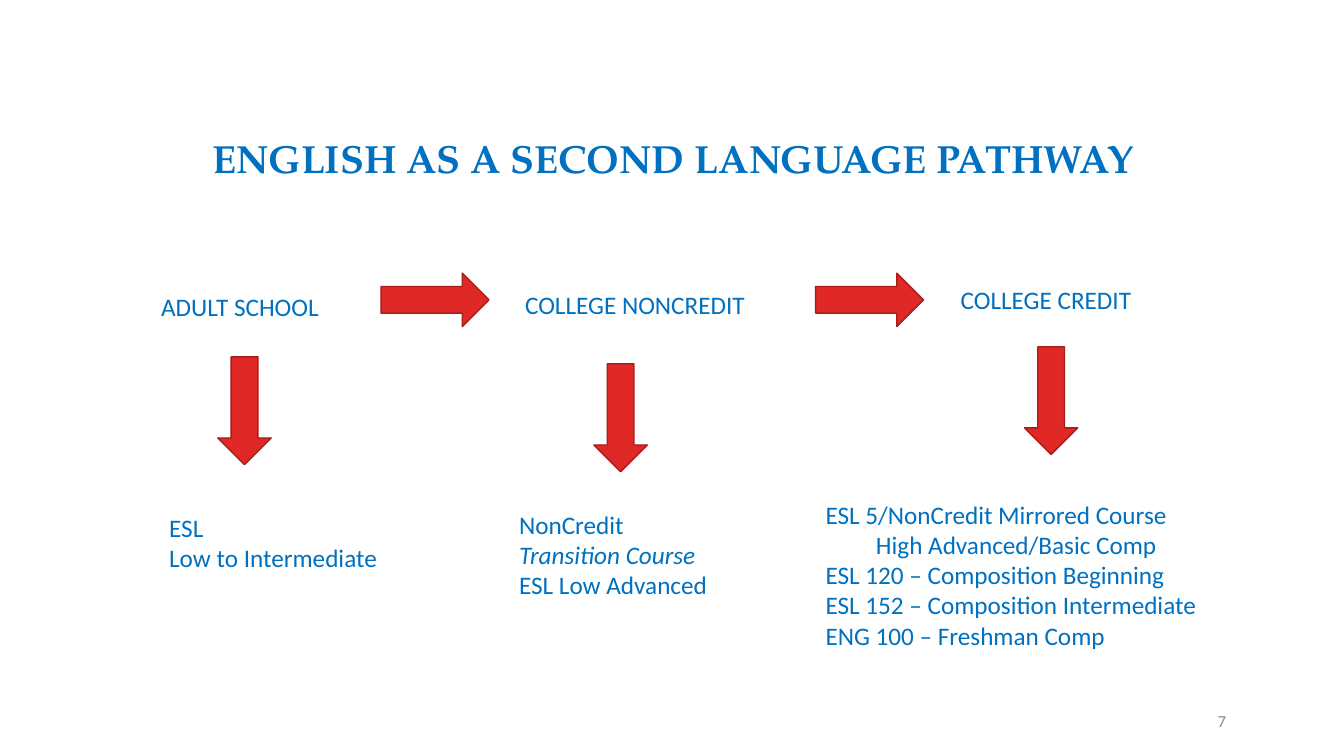
import pptx
import pptx.util
import pptx.dml.color
import pptx.enum.shapes
import pptx.enum.text

Inches = pptx.util.Inches
ALIGN = pptx.enum.text.PP_ALIGN
ANCHOR = pptx.enum.text.MSO_ANCHOR

COLORS = {"text": "0070C0", "arrow": "E02826", "edge": "A61E1C", "number": "888888"}
BODY_FONT = "Calibri"
TITLE_FONT = "TeX Gyre Pagella"
ITALIC_TEXT = "Transition Course"

TITLE = ("ENGLISH AS A SECOND LANGUAGE PATHWAY", (1.18, 1.32, 11, 0.53))
PAGE_NUMBER = ("7", (9.26, 6.95, 3, 0.4))

STAGES = [
    ("ADULT SCHOOL", (1.5, 2.84, 2.15, 0.4)),
    ("COLLEGE NONCREDIT", (5.11, 2.82, 2.81, 0.4)),
    ("COLLEGE CREDIT", (9.43, 2.77, 2.21, 0.4)),
]
COURSES = [
    (["ESL", "Low to Intermediate"], (1.58, 5.03, 2.64, 0.71)),
    (["NonCredit Transition Course", "ESL Low Advanced"], (5.05, 5, 2.23, 1.01)),
    (
        [
            "ESL 5/NonCredit Mirrored Course",
            "\tHigh Advanced/Basic Comp",
            "ESL 120 – Composition Beginning",
            "ESL 152 – Composition Intermediate",
            "ENG 100 – Freshman Comp",
        ],
        (8.09, 4.9, 4.3, 1.62),
    ),
]
ARROW_SIZE = (1.07, 0.53)
ARROWS = [
    (3.78, 2.71, 0),
    (8.09, 2.71, 0),
    (1.89, 3.81, 90),
    (5.62, 3.88, 90),
    (9.89, 3.71, 90),
]


def rgb(name):
    return pptx.dml.color.RGBColor.from_string(COLORS[name])


def add_text(page, lines, place, size=18, font=BODY_FONT, color="text",
             bold=False, align=ALIGN.LEFT, anchor=ANCHOR.TOP, spacing=None):
    box = page.shapes.add_textbox(*map(Inches, place))
    frame = box.text_frame
    frame.word_wrap = True
    frame.vertical_anchor = anchor
    for index, line in enumerate(lines):
        para = frame.add_paragraph() if index else frame.paragraphs[0]
        para.alignment = align
        para.line_spacing = spacing
        para.font.size = pptx.util.Pt(size)
        para.font.name = font
        para.font.bold = bold
        para.font.color.rgb = rgb(color)
        for part in line.partition(ITALIC_TEXT):
            if part:
                span = para.add_run()
                span.text = part
                if part == ITALIC_TEXT:
                    span.font.italic = True


def add_arrow(page, left, top, rotation):
    arrow = page.shapes.add_shape(
        pptx.enum.shapes.MSO_SHAPE.RIGHT_ARROW,
        *map(Inches, (left, top, *ARROW_SIZE)))
    arrow.rotation = rotation
    arrow.shadow.inherit = False
    arrow.fill.solid()
    arrow.fill.fore_color.rgb = rgb("arrow")
    arrow.line.color.rgb = rgb("edge")
    arrow.line.width = pptx.util.Pt(1)


def main():
    deck = pptx.Presentation()
    deck.slide_width = Inches(13.33)
    deck.slide_height = Inches(7.5)
    page = deck.slides.add_slide(deck.slide_layouts[6])

    title, title_place = TITLE
    add_text(page, [title], title_place, size=28, font=TITLE_FONT, bold=True,
             align=ALIGN.CENTER, anchor=ANCHOR.BOTTOM, spacing=0.9)
    for stage, place in STAGES:
        add_text(page, [stage], place)
    for lines, place in COURSES:
        add_text(page, lines, place)
    for arrow in ARROWS:
        add_arrow(page, *arrow)
    number, number_place = PAGE_NUMBER
    add_text(page, [number], number_place, size=12, color="number",
             align=ALIGN.RIGHT, anchor=ANCHOR.MIDDLE)

    deck.save("out.pptx")


if __name__ == "__main__":
    main()
